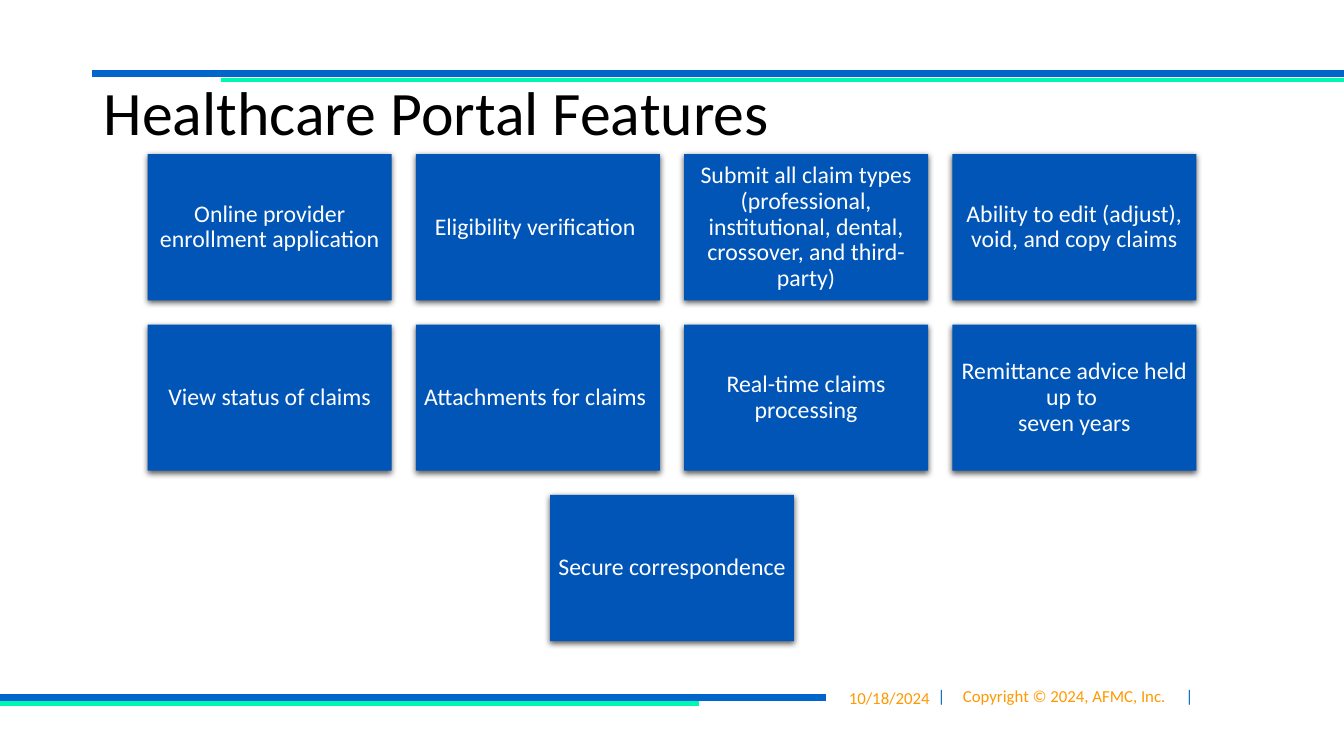
import pptx
import pptx.dml.color
import pptx.enum.shapes
import pptx.enum.text
import pptx.oxml
import pptx.util
import lxml.etree

Inches = pptx.util.Inches
ALIGN = pptx.enum.text.PP_ALIGN
NS = 'xmlns:a="http://schemas.openxmlformats.org/drawingml/2006/main"'
BLUE, MINT, ORANGE, CARD_BLUE = "0066CC", "00F6B4", "FF9900", "0055B7"


def color(hex_string):
    return pptx.dml.color.RGBColor.from_string(hex_string)


def write(shape, text, size=12, fill="000000", align=ALIGN.LEFT, spacing=None):
    frame = shape.text_frame
    frame.word_wrap = True
    frame.vertical_anchor = pptx.enum.text.MSO_ANCHOR.MIDDLE
    paragraph = frame.paragraphs[0]
    paragraph.alignment = align
    paragraph.line_spacing = spacing
    for index, line in enumerate(text.split("\v")):
        if index:
            paragraph.add_line_break()
        run = paragraph.add_run()
        run.text = line
        run.font.name = "Calibri"
        run.font.size = pptx.util.Pt(size)
        run.font.color.rgb = color(fill)


deck = pptx.Presentation()
deck.slide_width = Inches(13.33)
deck.slide_height = Inches(7.5)
slide = deck.slides.add_slide(deck.slide_layouts[6])

rules = [
    (0, 8.19, 6.92, BLUE, 4.5),
    (0.91, 13.33, 0.73, BLUE, 4.5),
    (2.19, 13.33, 0.79, MINT, 3),
    (0, 6.93, 6.98, MINT, 3),
]
for start, end, y, rule_color, weight in rules:
    rule = slide.shapes.add_connector(
        pptx.enum.shapes.MSO_CONNECTOR.STRAIGHT,
        Inches(start), Inches(y), Inches(end), Inches(y))
    rule.line.color.rgb = color(rule_color)
    rule.line.width = pptx.util.Pt(weight)
    rule._element.spPr.append(pptx.oxml.parse_xml(f"<a:effectLst {NS}/>"))

copyright_line = slide.shapes.add_textbox(
    Inches(8.96), Inches(6.57), Inches(3.22), Inches(0.66))
copyright_line.text_frame.margin_left = Inches(0.34)
tab_stops = pptx.oxml.parse_xml(f"<a:tabLst {NS}/>")
for position in (0.25, 2.46):
    tab = lxml.etree.SubElement(tab_stops, tab_stops.tag.replace("tabLst", "tab"))
    tab.set("pos", str(Inches(position)))
    tab.set("algn", "l")
copyright_line.text_frame.paragraphs[0]._p.get_or_add_pPr().append(tab_stops)
write(copyright_line, "|\t", fill=BLUE)
write(copyright_line, "Copyright © 2024, AFMC, Inc.\t", fill=ORANGE)
write(copyright_line, "|", fill=BLUE)

date = slide.shapes.add_textbox(
    Inches(8.32), Inches(6.59), Inches(4.5), Inches(0.66))
write(date, "10/18/2024", fill=ORANGE)

title = slide.shapes.add_textbox(
    Inches(0.93), Inches(0.64), Inches(11.5), Inches(1.01))
write(title, "Healthcare Portal Features", size=44.1, spacing=0.9)

feature_rows = [
    ["Online provider enrollment application",
     "Eligibility verification ",
     "Submit all claim types (professional, institutional, dental, "
     "crossover, and third-party)",
     "Ability to edit (adjust), void, and copy claims"],
    ["View status of claims",
     "Attachments for claims ",
     "Real-time claims processing",
     "Remittance advice held up to \vseven years"],
    ["Secure correspondence"],
]
card_width, card_height, gap, first_top = 2.42, 1.45, 0.24, 1.53
for row, features in enumerate(feature_rows):
    row_width = len(features) * (card_width + gap) - gap
    row_left = (13.33 - row_width) / 2
    for column, feature in enumerate(features):
        card = slide.shapes.add_shape(
            pptx.enum.shapes.MSO_SHAPE.RECTANGLE,
            Inches(row_left + column * (card_width + gap)),
            Inches(first_top + row * (card_height + gap)),
            Inches(card_width), Inches(card_height))
        card.fill.solid()
        card.fill.fore_color.rgb = color(CARD_BLUE)
        card.line.fill.background()
        card.shadow.inherit = False
        card._element.spPr[-1].append(pptx.oxml.parse_xml(
            f'<a:outerShdw {NS} blurRad="{pptx.util.Pt(4.5)}" '
            f'dist="{pptx.util.Pt(1.5)}" dir="5400000" algn="ctr" '
            'rotWithShape="0"><a:srgbClr val="000000">'
            '<a:alpha val="63000"/></a:srgbClr></a:outerShdw>'))
        frame = card.text_frame
        frame.margin_left = frame.margin_right = Inches(0.07)
        frame.margin_top = frame.margin_bottom = Inches(0.07)
        write(card, feature, size=17, fill="FFFFFF", align=ALIGN.CENTER, spacing=0.9)

deck.save("out.pptx")
